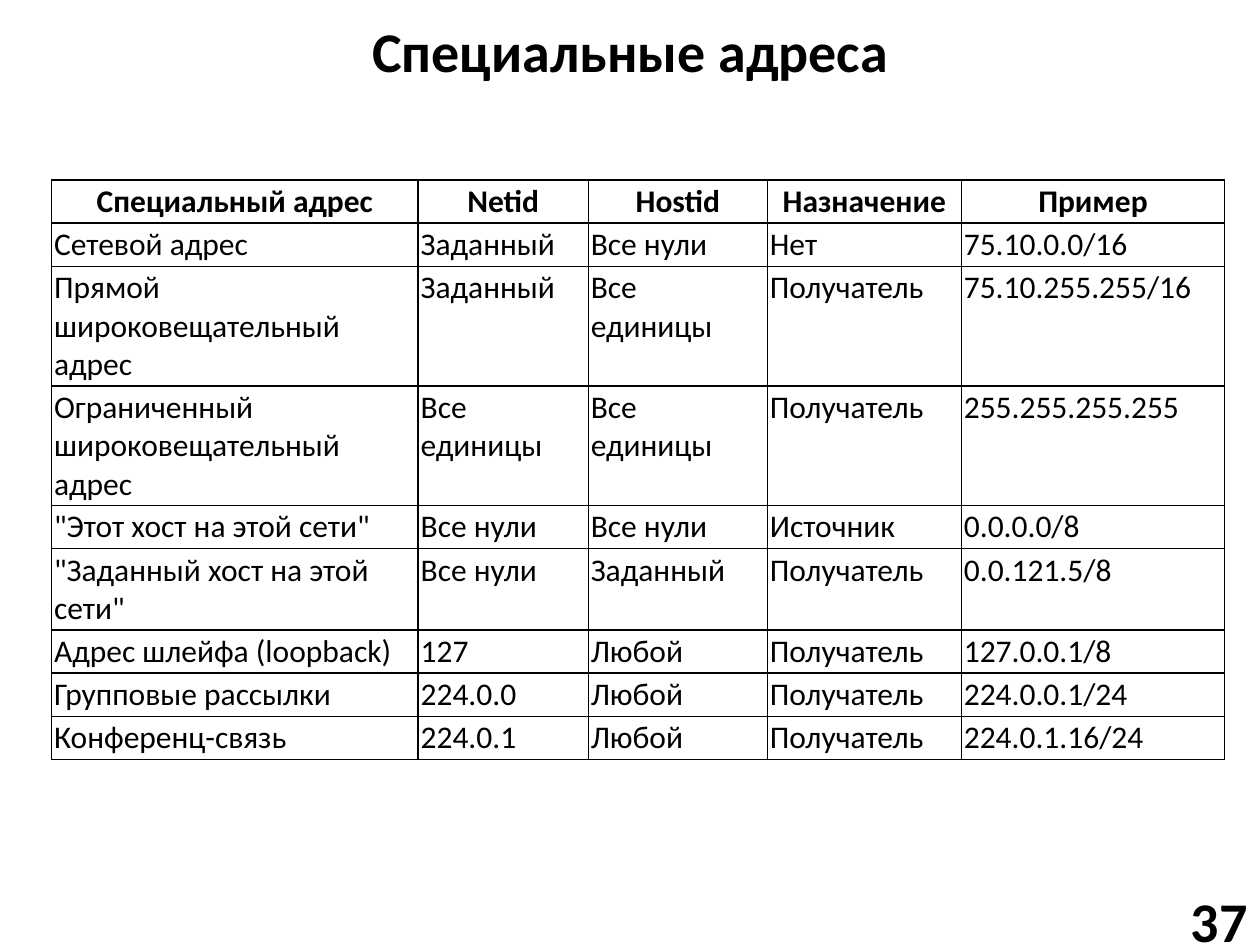
from lxml import etree
from pptx import Presentation
from pptx import util as u
from pptx.dml.color import RGBColor
from pptx.enum import text
from pptx.oxml import ns

BLACK = RGBColor(0x00, 0x00, 0x00)
WHITE = RGBColor(0xFF, 0xFF, 0xFF)

HEADINGS = ("Специальный адрес", "Netid", "Hostid", "Назначение", "Пример")
ADDRESSES = (
    ("Сетевой адрес", "Заданный", "Все нули", "Нет", "75.10.0.0/16"),
    ("Прямой широковещательный адрес", "Заданный", "Все единицы", "Получатель", "75.10.255.255/16"),
    ("Ограниченный широковещательный адрес", "Все единицы", "Все единицы", "Получатель", "255.255.255.255"),
    ('"Этот хост на этой сети"', "Все нули", "Все нули", "Источник", "0.0.0.0/8"),
    ('"Заданный хост на этой сети"', "Все нули", "Заданный", "Получатель", "0.0.121.5/8"),
    ("Адрес шлейфа (loopback)", "127", "Любой", "Получатель", "127.0.0.1/8"),
    ("Групповые рассылки", "224.0.0", "Любой", "Получатель", "224.0.0.1/24"),
    ("Конференц-связь", "224.0.1", "Любой", "Получатель", "224.0.1.16/24"),
)
COLUMN_WIDTHS = (7.39, 3.43, 3.61, 3.91, 5.31)
ROW_LINES = (1, 1, 3, 3, 1, 2, 1, 1, 1)


class SlideBuilder:
    """Holds the text style and the current slide, and adds elements to it."""

    font = "Calibri"
    heading_size = 32
    table_size = 18
    line_height = 0.77
    cell_margin = 0.05

    def __init__(self, slide):
        self.slide = slide
        slide.background.fill.solid()
        slide.background.fill.fore_color.rgb = WHITE

    def add_words(self, frame, words, size, bold, align):
        paragraph = frame.paragraphs[0]
        paragraph.alignment = align
        run = paragraph.add_run()
        run.text = words
        run.font.name = self.font
        run.font.size = u.Pt(size)
        run.font.bold = bold
        run.font.color.rgb = BLACK

    def heading(self, words, left, top, width, height, align):
        box = self.slide.shapes.add_textbox(u.Cm(left), u.Cm(top), u.Cm(width), u.Cm(height))
        frame = box.text_frame
        frame.word_wrap = True
        frame.vertical_anchor = text.MSO_ANCHOR.MIDDLE
        self.add_words(frame, words, self.heading_size, True, align)

    def border(self, cell):
        properties = cell._tc.get_or_add_tcPr()
        for side in ("a:lnL", "a:lnR", "a:lnT", "a:lnB"):
            line = etree.SubElement(properties, ns.qn(side), w=str(u.Pt(1)))
            fill = etree.SubElement(line, ns.qn("a:solidFill"))
            etree.SubElement(fill, ns.qn("a:srgbClr"), val=str(BLACK))

    def cell(self, cell, words, is_heading):
        self.border(cell)
        cell.fill.background()
        margin = u.Cm(self.cell_margin)
        cell.margin_left = cell.margin_right = margin
        cell.margin_top = cell.margin_bottom = margin
        cell.vertical_anchor = text.MSO_ANCHOR.MIDDLE if is_heading else text.MSO_ANCHOR.TOP
        align = text.PP_ALIGN.CENTER if is_heading else text.PP_ALIGN.LEFT
        self.add_words(cell.text_frame, words, self.table_size, is_heading, align)

    def table(self, rows, left, top, widths, row_lines):
        heights = [self.line_height * lines + 2 * self.cell_margin for lines in row_lines]
        table = self.slide.shapes.add_table(
            len(rows), len(widths), u.Cm(left), u.Cm(top), u.Cm(sum(widths)), u.Cm(sum(heights))
        ).table
        table.first_row = table.horz_banding = False
        for column, width in zip(table.columns, widths):
            column.width = u.Cm(width)
        for index, (row, height, words) in enumerate(zip(table.rows, heights, rows)):
            row.height = u.Cm(height)
            for cell, entry in zip(row.cells, words):
                self.cell(cell, entry, index == 0)


def main():
    deck = Presentation()
    deck.slide_width, deck.slide_height = u.Cm(25.4), u.Cm(19.05)
    builder = SlideBuilder(deck.slides.add_slide(deck.slide_layouts[6]))
    builder.heading("Специальные адреса", 0.71, 0.13, 24, 1.75, text.PP_ALIGN.CENTER)
    builder.heading("37", 22.5, 18.03, 2.9, 1.02, text.PP_ALIGN.RIGHT)
    builder.table((HEADINGS, *ADDRESSES), 1.04, 3.63, COLUMN_WIDTHS, ROW_LINES)
    deck.save("out.pptx")


if __name__ == "__main__":
    main()
